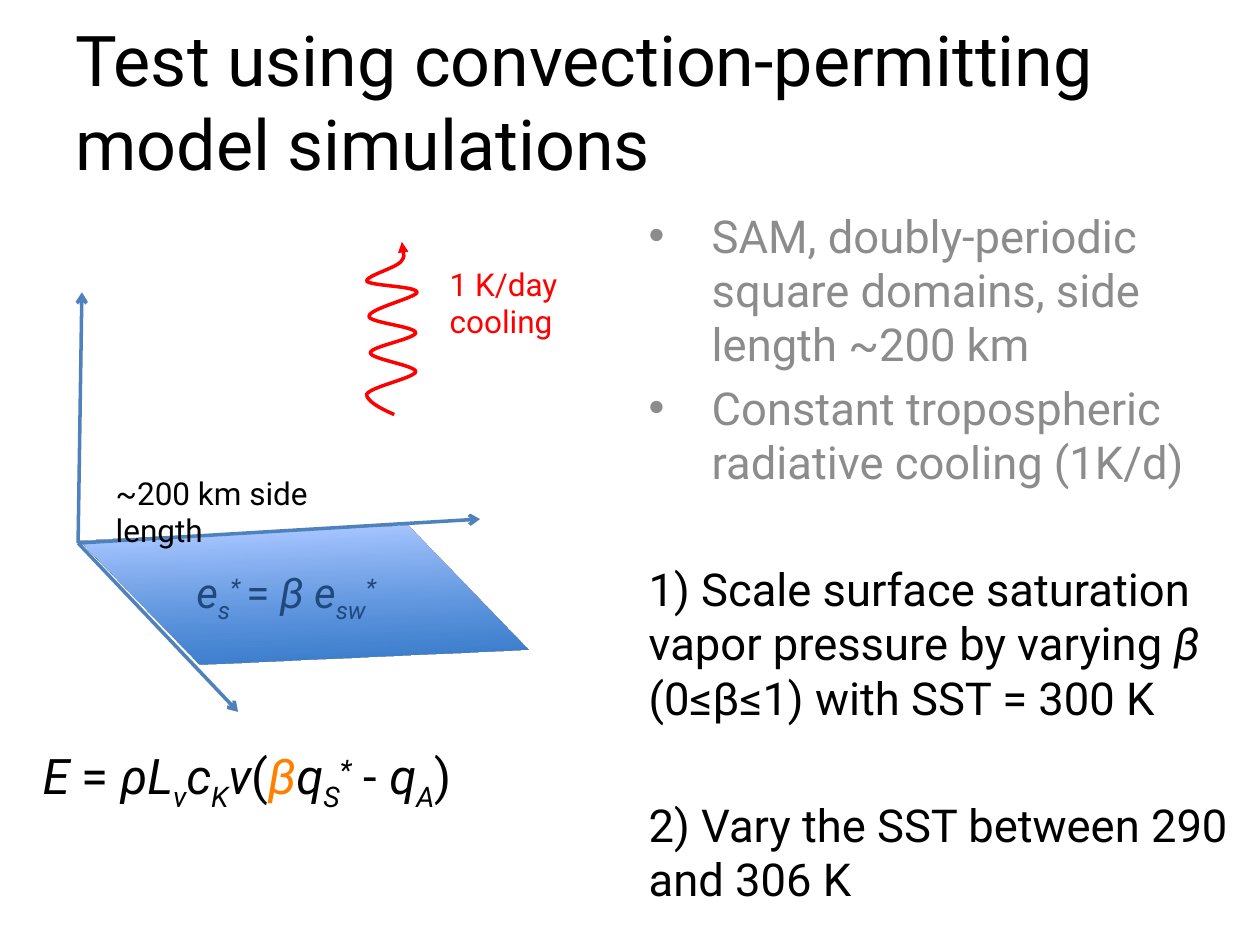
from dataclasses import dataclass

from lxml.etree import SubElement
from pptx import Presentation
from pptx.dml.color import RGBColor as Rgb
from pptx.enum.shapes import MSO_CONNECTOR as Conn, MSO_SHAPE as Kind
from pptx.enum.text import MSO_ANCHOR as Anchor, MSO_AUTO_SIZE as Auto, PP_ALIGN as Align
from pptx.oxml.ns import qn
from pptx.util import Emu, Pt

PX = 9144  # 100 px to the inch
DEGREE = 60000


@dataclass(frozen=True)
class Theme:
    font: str = "Roboto"
    ink: str = "000000"
    gray: str = "8C8C8C"
    blue: str = "4F81BD"
    navy: str = "1F497D"
    red: str = "FF0000"
    gold: str = "FF8000"
    deep: str = "3F80CE"
    pale: str = "A4C4FF"
    head: float = 40
    body: float = 25.9
    law: float = 28
    term: float = 24
    note: float = 18


T = Theme()


def px(*nums):
    return [Emu(round(n * PX)) for n in nums]


def style(run, size, color, marks=""):
    """Marks: i italic, - subscript, + superscript."""
    font = run.font
    font.name, font.size, font.italic = T.font, Pt(size), "i" in marks
    font.color.rgb = Rgb.from_string(color)
    for mark, base in (("-", "-25000"), ("+", "30000")):
        if mark in marks:
            run._r.get_or_add_rPr().set("baseline", base)


def fill_par(par, parts, size, color):
    """Each part is (text, marks) or (text, marks, color)."""
    for text, marks, *tint in parts:
        run = par.add_run()
        run.text = text
        style(run, size, tint[0] if tint else color, marks)


def text_box(slide, box, pars, size, color, wrap=True):
    frame = slide.shapes.add_textbox(*px(*box)).text_frame
    frame.word_wrap = wrap
    for n, parts in enumerate(pars):
        par = frame.add_paragraph() if n else frame.paragraphs[0]
        fill_par(par, parts, size, color)
    return frame


def stroke(shape, color, tip):
    shape.line.color.rgb = Rgb.from_string(color)
    shape.line.width = Pt(2)
    SubElement(shape.line._get_or_add_ln(), qn("a:tailEnd"), type=tip)


def add_title(slide, box):
    title = slide.shapes.title
    title.left, title.top, title.width, title.height = px(*box)
    frame = title.text_frame
    frame.text = "Test using convection-permitting model simulations"
    frame.auto_size, frame.vertical_anchor = Auto.NONE, Anchor.MIDDLE
    par = frame.paragraphs[0]
    par.alignment = Align.LEFT
    style(par.runs[0], T.head, T.ink)


def add_points(slide, box):
    points = [
        [("SAM, doubly-periodic square domains, side length ~200 km", "", T.gray)],
        [("Constant tropospheric radiative cooling (1K/d)", "", T.gray)],
        [("1) Scale surface saturation vapor pressure by varying ", ""),
         ("β ", "i"), ("(0≤β≤1) with SST = 300 K", "")],
        [("2) Vary the SST between 290 and 306 K", "")],
    ]
    frame = text_box(slide, box, points, T.body, T.ink)
    for n, par in enumerate(frame.paragraphs):
        par.space_before = Pt(5 if n < 2 else 41.5)
        if n < 2:
            props = par._p.get_or_add_pPr()
            props.set("marL", str(50 * PX))
            props.set("indent", str(-50 * PX))
            SubElement(props, qn("a:buFont"), typeface="Arial")
            SubElement(props, qn("a:buChar"), char="•")


def add_floor(slide, box):
    """Square sea surface, laid flat by turning it in space."""
    floor = slide.shapes.add_shape(Kind.RECTANGLE, *px(*box))
    floor.line.fill.background()
    floor.fill.gradient()
    floor.fill.gradient_angle = 90
    stops = zip(floor.fill.gradient_stops, (T.deep, T.pale), (0, 1))
    for stop, color, spot in stops:
        stop.color.rgb = Rgb.from_string(color)
        stop.position = spot
    floor.shadow.inherit = False
    scene = SubElement(floor._element.spPr, qn("a:scene3d"))
    camera = SubElement(scene, qn("a:camera"), prst="orthographicFront")
    SubElement(camera, qn("a:rot"), lat=str(round(299.4 * DEGREE)),
               lon=str(round(314.5 * DEGREE)), rev=str(round(44.2 * DEGREE)))
    SubElement(scene, qn("a:lightRig"), rig="threePt", dir="t")


def add_axes(slide, left, top):
    for x, y in ((3, -199), (127, 134), (319, -19)):
        axis = slide.shapes.add_connector(
            Conn.STRAIGHT, *px(left, top, left + x, top + y))
        stroke(axis, T.blue, "arrow")
        SubElement(axis._element.spPr, qn("a:effectLst"))


def add_wave(slide, left, top):
    """Radiation wave that rises to an arrowhead."""
    knots = [(22, 137),
             (10, 132), (0, 126), (0, 121), (3, 115), (38, 108), (39, 103),
             (39, 98), (3, 93), (3, 88), (3, 83), (39, 77), (39, 72),
             (38, 67), (1, 64), (2, 59), (2, 53), (40, 44), (40, 40),
             (40, 35), (2, 35), (0, 31), (0, 27), (22, 21), (27, 16),
             (31, 11), (28, 0), (28, 0)]
    spots = [px(left + x, top + y) for x, y in knots]
    pen = slide.shapes.build_freeform(*spots[0], scale=1.0)
    pen.add_line_segments(spots[1:], close=False)
    wave = pen.convert_to_shape()
    # Every three straight steps become one cubic curve
    track = wave._element.find(".//" + qn("a:path"))
    steps = track.findall(qn("a:lnTo"))
    for n in range(0, len(steps), 3):
        curve = SubElement(track, qn("a:cubicBezTo"))
        for step in steps[n:n + 3]:
            curve.append(step[0])
            track.remove(step)
    wave.shadow.inherit = False
    wave.fill.background()
    stroke(wave, T.red, "triangle")


def add_domain(slide, left, top):
    """Model domain; left and top are the origin of the axes."""
    add_floor(slide, (left + 40, top - 98, 279, 279))
    add_axes(slide, left, top)
    add_wave(slide, left + 229, top - 239)
    text_box(slide, (left + 285, top - 226, 115, 71),
             [[("1 K/day", "")], [("cooling", "")]], T.note, T.red)
    text_box(slide, (left + 20, top - 60, 240, 40),
             [[("~200 km side length", "")]], T.note, T.ink)
    term = [("e", "i"), ("s", "i-"), ("* ", "i+"), ("= ", ""),
            ("β e", "i"), ("sw", "i-"), ("*", "i+")]
    text_box(slide, (left + 84, top + 14, 185, 50), [term], T.term, T.navy, False)


def add_law(slide, box):
    law = [("E ", "i"), ("= ", ""), ("ρL", "i"), ("v", "i-"), ("c", "i"),
           ("K", "i-"), ("v", "i"), ("(", ""), ("β", "i", T.gold), ("q", "i"),
           ("S", "i-"), ("*", "i+"), (" - ", ""), ("q", "i"), ("A", "i-"), (")", "")]
    text_box(slide, box, [law], T.law, T.ink, False)


def main():
    deck = Presentation()
    deck.slide_width, deck.slide_height = px(1000, 750)
    slide = deck.slides.add_slide(deck.slide_layouts[5])
    add_title(slide, (50, 0, 950, 160))
    add_points(slide, (505, 160, 495, 590))
    add_domain(slide, 62, 431)
    add_law(slide, (24, 587, 384, 57))
    deck.save("out.pptx")


if __name__ == "__main__":
    main()
